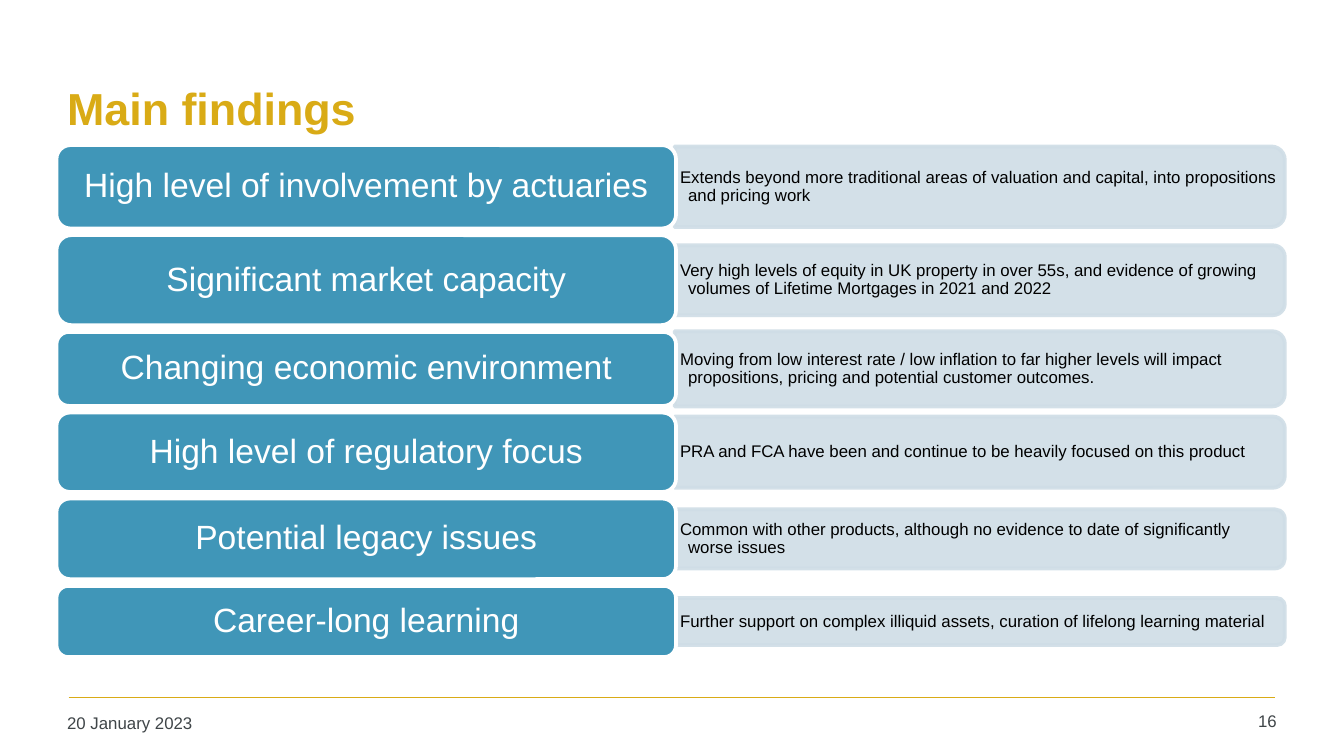
from lxml import etree
from pptx import Presentation
from pptx.dml.color import RGBColor
from pptx.enum import shapes, text
from pptx.oxml.ns import qn
from pptx.util import Inches, Pt

GOLD = RGBColor(0xD9, 0xAB, 0x16)
SLATE = RGBColor(0x3F, 0x45, 0x48)
BLUE = RGBColor(0x40, 0x96, 0xB8)
PALE = RGBColor(0xCF, 0xDD, 0xE6)
WHITE = RGBColor(0xFF, 0xFF, 0xFF)
BLACK = RGBColor(0, 0, 0)

# label, detail, label height, detail bar height
FINDINGS = [
    ("High level of involvement by actuaries",
     "Extends beyond more traditional areas of valuation and capital, "
     "into propositions and pricing work", 0.62, 0.6),
    ("Significant market capacity",
     "Very high levels of equity in UK property in over 55s, and evidence of "
     "growing volumes of Lifetime Mortgages in 2021 and 2022", 0.67, 0.52),
    ("Changing economic environment",
     "Moving from low interest rate / low inflation to far higher levels will "
     "impact propositions, pricing and potential customer outcomes.", 0.55, 0.56),
    ("High level of regulatory focus",
     "PRA and FCA have been and continue to be heavily focused on this product",
     0.59, 0.53),
    ("Potential legacy issues",
     "Common with other products, although no evidence to date of "
     "significantly worse issues", 0.6, 0.44),
    ("Career-long learning",
     "Further support on complex illiquid assets, curation of lifelong "
     "learning material", 0.53, 0.35),
]
LABEL_LEFT, LABEL_WIDTH = 0.42, 4.61
DETAIL_LEFT, DETAIL_WIDTH = 5.02, 4.54
FIRST_TOP, ROW_GAP = 1.08, 0.05


def write(shape, words, size, color, align=text.PP_ALIGN.LEFT,
          anchor=text.MSO_ANCHOR.MIDDLE, inset=(0.07, 0.04)):
    """Put one run in the shape; inset is (sides, top and bottom) in inches."""
    frame = shape.text_frame
    frame.word_wrap = True
    frame.vertical_anchor = anchor
    frame.margin_left = frame.margin_right = Inches(inset[0])
    frame.margin_top = frame.margin_bottom = Inches(inset[1])
    paragraph = frame.paragraphs[0]
    paragraph.alignment = align
    run = paragraph.add_run()
    run.text = words
    run.font.name = "Arial"
    run.font.size = Pt(size)
    run.font.color.rgb = color
    return paragraph


def paint(shape, fill, line):
    shape.shadow.inherit = False
    shape.fill.solid()
    shape.fill.fore_color.rgb = fill
    shape.line.color.rgb = line
    shape.line.width = Pt(2)


prs = Presentation()
prs.slide_width = Inches(10)
prs.slide_height = prs.slide_width * 9 // 16
slide = prs.slides.add_slide(prs.slide_layouts[6])
canvas = slide.shapes

footer_rule = canvas.add_connector(
    shapes.MSO_CONNECTOR.STRAIGHT, Inches(0.51), Inches(5.19), Inches(9.49), Inches(5.19))
footer_rule.line.color.rgb = GOLD
footer_rule.line.width = Pt(1)
etree.SubElement(footer_rule._element.spPr, qn("a:effectLst"))

title = canvas.add_textbox(Inches(0.43), Inches(0.33), Inches(9.07), Inches(0.94))
write(title, "Main findings", 24, GOLD).runs[0].font.bold = True

date = canvas.add_textbox(Inches(0.43), Inches(5.26), Inches(2.2), Inches(0.27))
write(date, "20 January 2023", 9, SLATE, anchor=text.MSO_ANCHOR.TOP)

page_number = canvas.add_textbox(Inches(8.86), Inches(5.25), Inches(0.71), Inches(0.28))
write(page_number, "16", 9, SLATE, text.PP_ALIGN.RIGHT, text.MSO_ANCHOR.TOP)

top = FIRST_TOP
for heading, explanation, label_height, bar_height in FINDINGS:
    middle = top + label_height / 2

    # The bar is an upright shape turned a quarter, so its round corners face right
    bar = canvas.add_shape(
        shapes.MSO_SHAPE.ROUND_2_SAME_RECTANGLE,
        Inches(DETAIL_LEFT + (DETAIL_WIDTH - bar_height) / 2),
        Inches(middle - DETAIL_WIDTH / 2), Inches(bar_height), Inches(DETAIL_WIDTH))
    bar.rotation = 90
    paint(bar, PALE, PALE)
    for tint in bar._element.spPr.iter(qn("a:srgbClr")):
        etree.SubElement(tint, qn("a:alpha")).set("val", "90000")

    detail_height = bar_height - 0.04
    detail = canvas.add_textbox(Inches(DETAIL_LEFT), Inches(middle - detail_height / 2),
                                Inches(DETAIL_WIDTH), Inches(detail_height))
    paragraph = write(detail, explanation, 9, BLACK, inset=(0.04, 0.02))
    paragraph.line_spacing = 0.9
    indent = paragraph._p.get_or_add_pPr()
    indent.set("marL", str(Inches(0.06)))
    indent.set("indent", str(Inches(-0.06)))

    label = canvas.add_shape(shapes.MSO_SHAPE.ROUNDED_RECTANGLE, Inches(LABEL_LEFT),
                             Inches(top), Inches(LABEL_WIDTH), Inches(label_height))
    paint(label, BLUE, WHITE)
    write(label, heading, 18, WHITE, text.PP_ALIGN.CENTER).line_spacing = 0.9

    top += label_height + ROW_GAP

prs.save("out.pptx")
